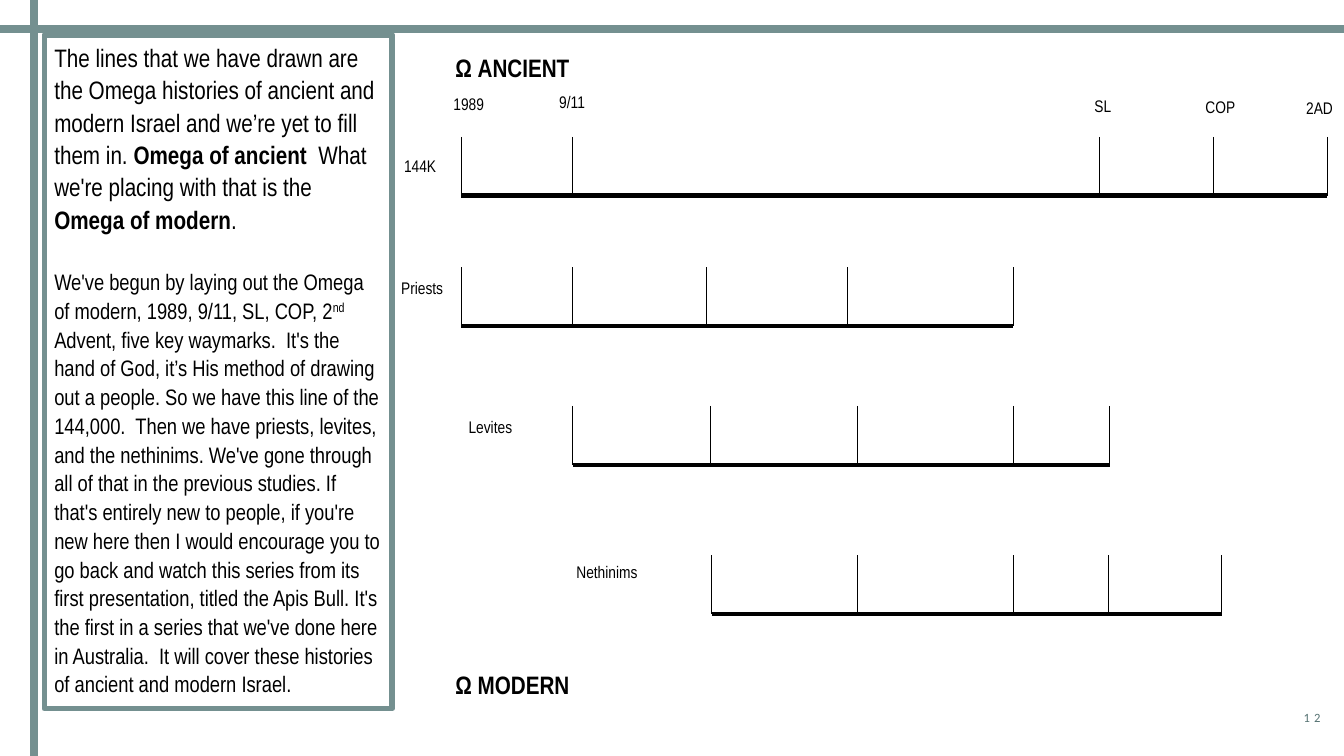
"""Build the slide that compares the Omega lines of ancient and modern Israel."""
from dataclasses import dataclass

import pptx
import pptx.dml.color
import pptx.enum.shapes
import pptx.enum.text
import pptx.oxml.ns
import pptx.util
from lxml import etree

Pt = pptx.util.Pt
ALIGN = pptx.enum.text.PP_ALIGN
ANCHOR = pptx.enum.text.MSO_ANCHOR
AUTO_SIZE = pptx.enum.text.MSO_AUTO_SIZE


@dataclass(frozen=True)
class Theme:
    """Colours, fonts, type sizes and line widths in points."""
    ink: str = "000000"
    accent: str = "749090"
    number: str = "557272"
    body_font: str = "Arial Narrow"
    number_font: str = "Calibri"
    heading: int = 18
    body: int = 16
    label: int = 12
    page: int = 9
    frame: float = 4
    rule: float = 6
    baseline: float = 3
    tick: float = 0.75


THEME = Theme()
SLIDE_WIDTH, SLIDE_HEIGHT = 960, 540
TICK_HEIGHT = 42

LEAD = [
    ("The lines that we have drawn are the Omega histories of ancient and modern Israel "
     "and we’re yet to fill them in. ", {}),
    ("Omega of ancient  ", {"bold": True}),
    ("What we're placing with that is the ", {}),
    ("Omega of modern", {"bold": True}),
    (".", {}),
]
DETAIL = [
    ("We've begun by laying out the Omega of modern, 1989, 9/11, SL, COP, 2", {}),
    ("nd", {"superscript": True}),
    (" Advent, five key waymarks.  It's the hand of God, it’s His method of drawing out a "
     "people. So we have this line of the 144,000.  Then we have priests, levites, and the "
     "nethinims. We've gone through all of that in the previous studies. If that's entirely "
     "new to people, if you're new here then I would encourage you to go back and watch this "
     "series from its first presentation, titled the Apis Bull. It's the first in a series "
     "that we've done here in Australia.  It will cover these histories of ancient and "
     "modern Israel.", {}),
]

TIMELINES = [
    (139.7, [329.5, 409, 785.5, 867, 948.2]),
    (233, [329.5, 409, 504.7, 605.5, 723.6]),
    (332, [409, 507.6, 612.7, 723.6, 792.7]),
    (438.5, [508.3, 612.7, 723.6, 791.5, 872.6]),
]
LABELS = [
    ("1989", 316.8, 63.4, 49, ALIGN.LEFT),
    ("9/11", 385.2, 61.9, 46.8, ALIGN.CENTER),
    ("SL", 774.7, 64.8, 31.7, ALIGN.LEFT),
    ("COP", 853.9, 65.5, 36.7, ALIGN.LEFT),
    ("2AD", 925.9, 66.2, 41, ALIGN.LEFT),
    ("144K", 281.5, 108, 49, ALIGN.LEFT),
    ("Priests", 279.4, 195.1, 49, ALIGN.LEFT),
    ("Levites", 327.6, 293.8, 49, ALIGN.LEFT),
    ("Nethinims", 404.6, 397.4, 63.4, ALIGN.LEFT),
]
HEADINGS = [("Ω ANCIENT", 33.8), ("Ω MODERN", 474.5)]


def rgb(colour):
    """Turn a hex string into a colour value."""
    return pptx.dml.color.RGBColor.from_string(colour)


def apply(target, values):
    """Set each named attribute on the target."""
    for name, value in values.items():
        setattr(target, name, value)


def add_run(paragraph, text, size, font=THEME.body_font, colour=THEME.ink,
            bold=False, superscript=False, tracking=0):
    """Add one formatted run to a paragraph."""
    run = paragraph.add_run()
    run.text = text
    apply(run.font, {"name": font, "size": Pt(size), "bold": bold})
    run.font.color.rgb = rgb(colour)
    properties = run._r.get_or_add_rPr()
    if superscript:
        properties.set("baseline", "30000")
    if tracking:
        properties.set("spc", str(tracking * 100))


def add_line(slide, start, end, width, colour=THEME.ink):
    """Draw a straight line without a shadow."""
    connector = slide.shapes.add_connector(
        pptx.enum.shapes.MSO_CONNECTOR.STRAIGHT, *map(Pt, (*start, *end)))
    connector.line.width = Pt(width)
    connector.line.color.rgb = rgb(colour)
    etree.SubElement(connector._element.spPr, pptx.oxml.ns.qn("a:effectLst"))


def add_text(slide, text, box, size, align=ALIGN.LEFT, anchor=ANCHOR.TOP, **style):
    """Place a one-line text box."""
    frame = slide.shapes.add_textbox(*map(Pt, box)).text_frame
    apply(frame, {"word_wrap": True, "vertical_anchor": anchor})
    paragraph = frame.paragraphs[0]
    paragraph.alignment = align
    add_run(paragraph, text, size, **style)


def add_commentary(slide):
    """Place the framed commentary on the left."""
    shape = slide.shapes.add_shape(
        pptx.enum.shapes.MSO_SHAPE.RECTANGLE, *map(Pt, (31.7, 25.2, 248.4, 481)))
    shape.shadow.inherit = False
    shape.fill.background()
    shape.line.width = Pt(THEME.frame)
    shape.line.color.rgb = rgb(THEME.accent)
    frame = shape.text_frame
    apply(frame, {"word_wrap": True, "vertical_anchor": ANCHOR.TOP,
                  "auto_size": AUTO_SIZE.SHAPE_TO_FIT_TEXT})
    lead, detail = frame.paragraphs[0], frame.add_paragraph()
    for paragraph, runs, size, gap in ((lead, LEAD, THEME.heading, 0),
                                       (detail, DETAIL, THEME.body, 23)):
        apply(paragraph, {"alignment": ALIGN.LEFT, "line_spacing": 1.07,
                          "space_before": Pt(gap)})
        for text, style in runs:
            add_run(paragraph, text, size, **style)


def add_timeline(slide, base, waymarks):
    """Draw a baseline with one upright tick at each waymark."""
    add_line(slide, (waymarks[0], base), (waymarks[-1], base), THEME.baseline)
    for x in waymarks:
        add_line(slide, (x, base - TICK_HEIGHT), (x, base), THEME.tick)


def main():
    """Build and save the slide."""
    presentation = pptx.Presentation()
    apply(presentation, {"slide_width": Pt(SLIDE_WIDTH), "slide_height": Pt(SLIDE_HEIGHT)})
    slide = presentation.slides.add_slide(presentation.slide_layouts[6])
    add_commentary(slide)
    add_line(slide, (0, 20.9), (SLIDE_WIDTH, 20.9), THEME.rule, THEME.accent)
    add_line(slide, (24.5, SLIDE_HEIGHT), (24.5, 0), THEME.rule, THEME.accent)
    for base, waymarks in TIMELINES:
        add_timeline(slide, base, waymarks)
    for text, left, top, width, align in LABELS:
        add_text(slide, text, (left, top, width, 21.8), THEME.label, align)
    for text, top in HEADINGS:
        add_text(slide, text, (318.2, top, 115.2, 29), THEME.heading, bold=True)
    add_text(slide, "12", (882, 498.2, 68.4, 28.8), THEME.page, ALIGN.RIGHT, ANCHOR.MIDDLE,
             font=THEME.number_font, colour=THEME.number, tracking=3)
    presentation.save("out.pptx")


if __name__ == "__main__":
    main()
